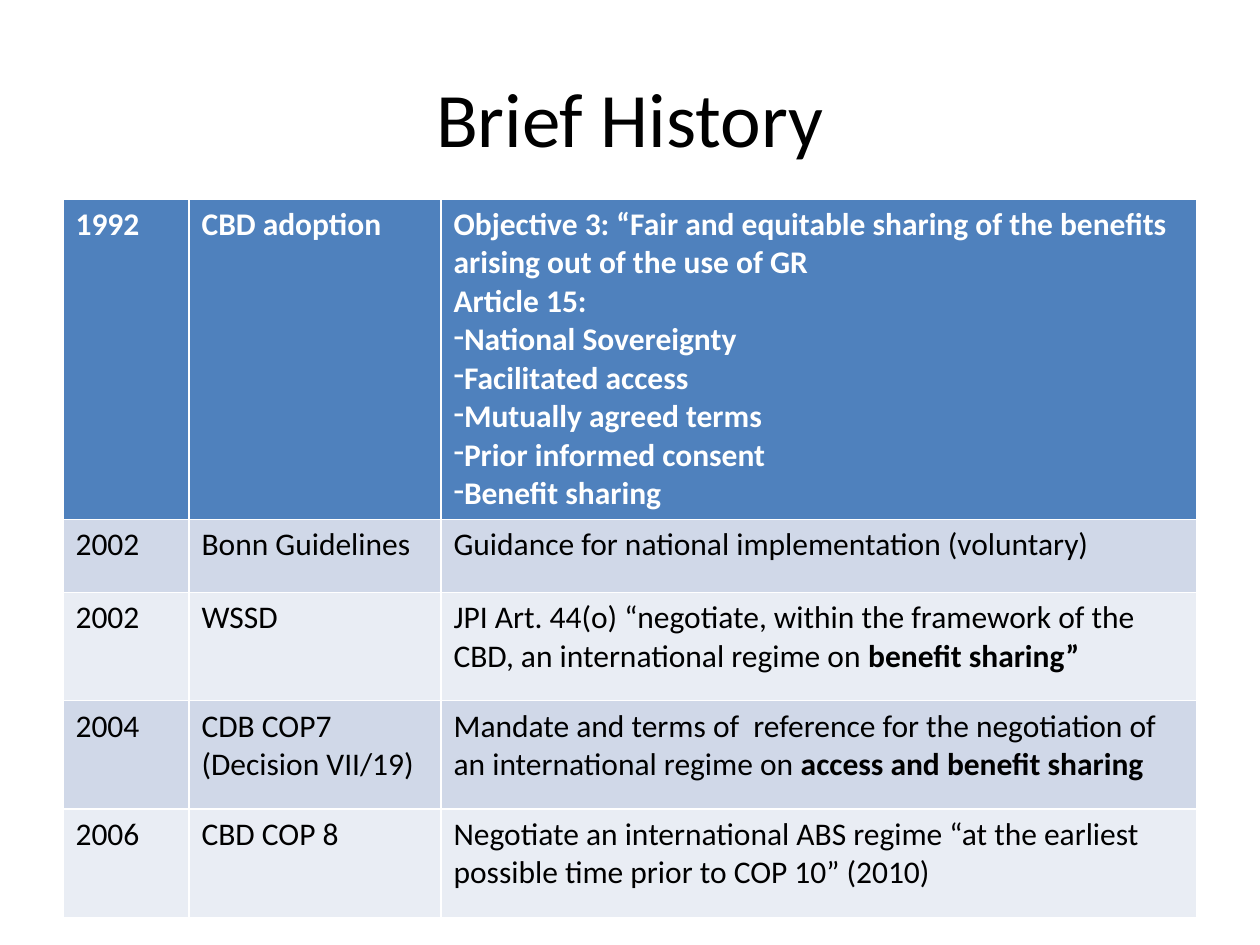
"""Build the Brief History slide with its timeline table."""
from lxml import etree
from pptx import Presentation
from pptx.dml.color import RGBColor
from pptx.enum.text import MSO_ANCHOR, PP_ALIGN
from pptx.oxml.ns import qn
from pptx.util import Inches, Pt

CENTER = PP_ALIGN.CENTER
LEFT = PP_ALIGN.LEFT
MIDDLE = MSO_ANCHOR.MIDDLE
TOP = MSO_ANCHOR.TOP
BLACK = RGBColor(0x00, 0x00, 0x00)
WHITE = RGBColor(0xFF, 0xFF, 0xFF)
BLUE = RGBColor(0x4F, 0x81, 0xBD)
BAND_DARK = RGBColor(0xD0, 0xD8, 0xE8)
BAND_LIGHT = RGBColor(0xE9, 0xED, 0xF4)
FONT = "Calibri"

COLUMN_WIDTHS = [1, 2, 6]
ROW_HEIGHTS = [2.51, 0.58, 0.86, 0.86, 0.86]
ROWS = [
    ("1992", "CBD adoption",
     "Objective 3: “Fair and equitable sharing of the benefits arising out of the use of GR\n"
     "Article 15:\n-National Sovereignty\n-Facilitated access\n-Mutually agreed terms\n"
     "-Prior informed consent\n-Benefit sharing"),
    ("2002", "Bonn Guidelines", "Guidance for national implementation (voluntary)"),
    ("2002", "WSSD",
     "JPI Art. 44(o) “negotiate, within the framework of the CBD, "
     "an international regime on **benefit sharing”"),
    ("2004", "CDB COP7 (Decision VII/19)",
     "Mandate and terms of  reference for the negotiation of "
     "an international regime on **access and benefit sharing"),
    ("2006", "CBD COP 8",
     "Negotiate an international ABS regime “at the earliest "
     "possible time prior to COP 10” (2010)"),
]


def write(tf, text, size=18, color=BLACK, bold=False, align=LEFT):
    """Write lines; a leading - makes a bullet and ** starts bold text."""
    for i, line in enumerate(text.split("\n")):
        p = tf.add_paragraph() if i else tf.paragraphs[0]
        p.alignment = align
        if line.startswith("-"):
            line = line[1:]
            pPr = p._p.get_or_add_pPr()
            etree.SubElement(pPr, qn("a:buFontTx"))
            etree.SubElement(pPr, qn("a:buChar")).set("char", "-")
        for j, part in enumerate(line.split("**")):
            r = p.add_run()
            r.text = part
            r.font.name = FONT
            r.font.size = Pt(size)
            r.font.color.rgb = color
            r.font.bold = bold or j > 0


prs = Presentation()
prs.slide_width = Inches(10)
prs.slide_height = Inches(7.5)
s = prs.slides.add_slide(prs.slide_layouts[5])

title = s.shapes.title
title.left, title.top = Inches(0.5), Inches(0.3)
title.width, title.height = Inches(9), Inches(1.25)
title.text_frame.vertical_anchor = MIDDLE
write(title.text_frame, "Brief History", size=44, align=CENTER)

table = s.shapes.add_table(len(ROWS), len(COLUMN_WIDTHS), Inches(0.5), Inches(1.58),
                           Inches(9), Inches(sum(ROW_HEIGHTS))).table
for column, width in zip(table.columns, COLUMN_WIDTHS):
    column.width = Inches(width)

for i, (texts, height) in enumerate(zip(ROWS, ROW_HEIGHTS)):
    table.rows[i].height = Inches(height)
    header = i == 0
    fill = BLUE if header else BAND_DARK if i % 2 else BAND_LIGHT
    for j, text in enumerate(texts):
        cell = table.cell(i, j)
        cell.fill.solid()
        cell.fill.fore_color.rgb = fill
        cell.vertical_anchor = TOP
        write(cell.text_frame, text, color=WHITE if header else BLACK, bold=header)

prs.save("out.pptx")
